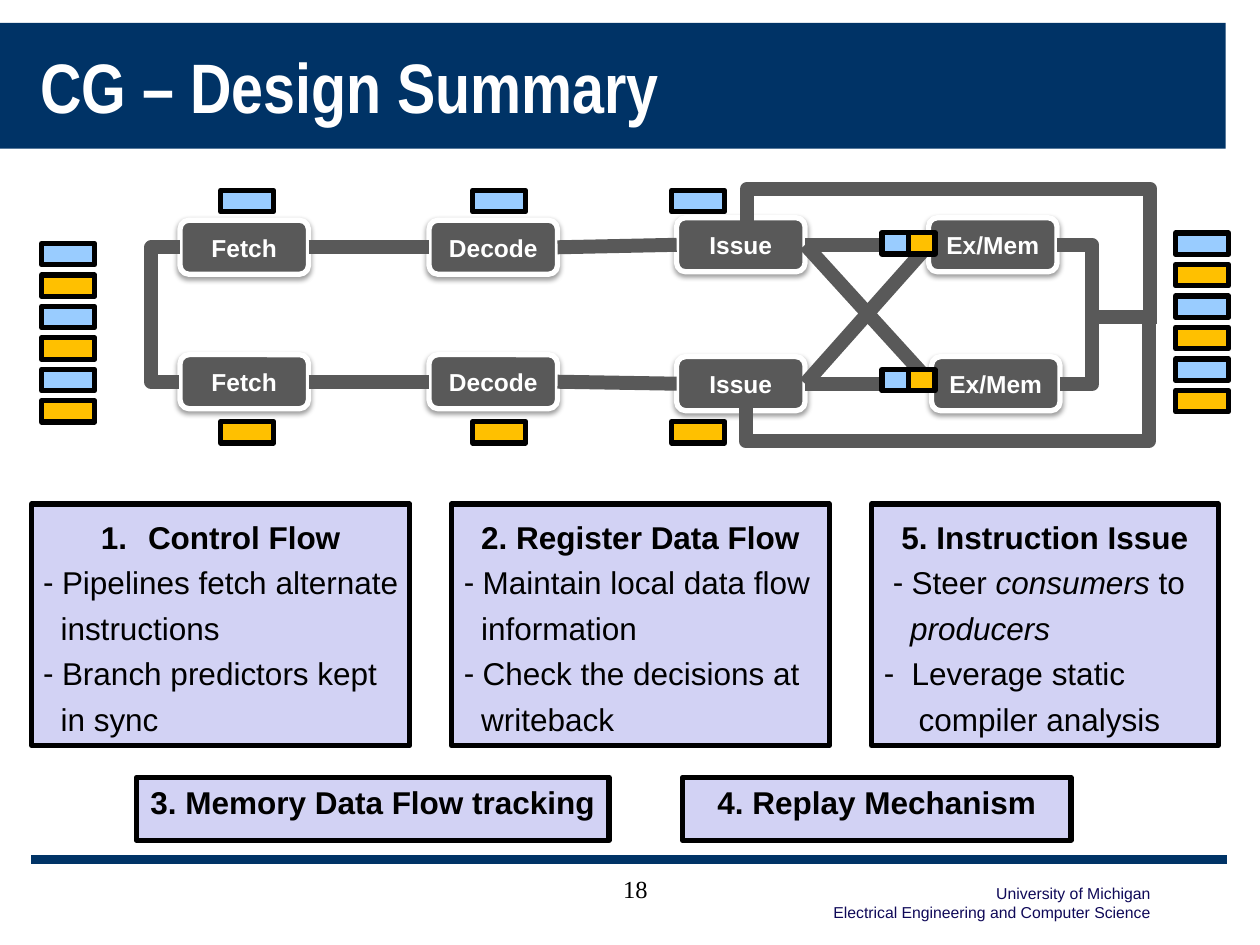
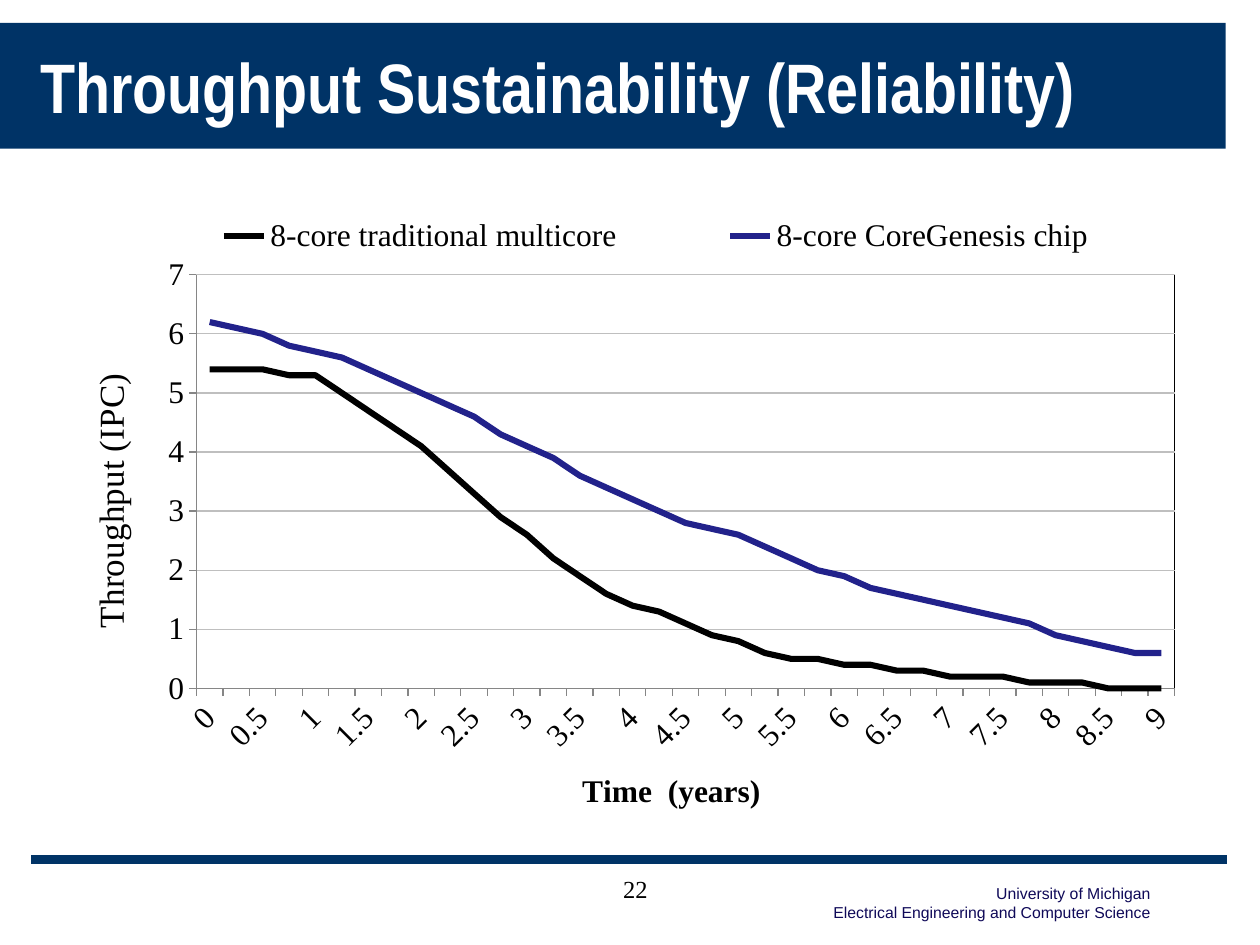
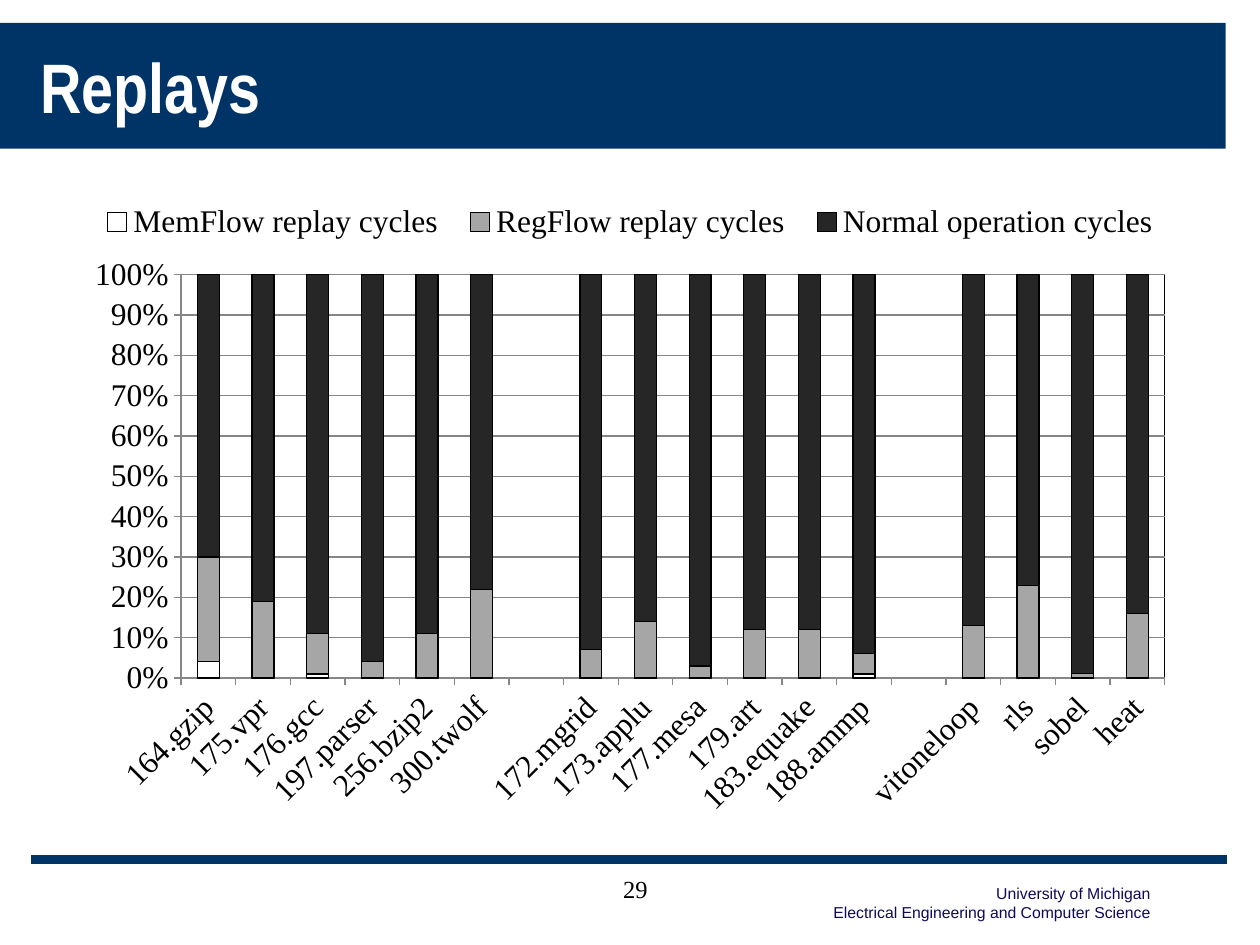
from dataclasses import dataclass
from typing import NamedTuple

from pptx import Presentation
from pptx.chart.data import CategoryChartData
from pptx.dml.color import RGBColor
from pptx.enum import chart as ch, shapes as sh, text as tx
from pptx.oxml import parse_xml
from pptx.oxml.ns import nsdecls, qn
from pptx.util import Cm, Pt


@dataclass(frozen=True)
class Theme:
    navy: str = "003366"
    footer_ink: str = "0F0958"
    white: str = "FFFFFF"
    black: str = "000000"
    stage: str = "595959"
    sky: str = "99CCFF"
    amber: str = "FFC000"
    lilac: str = "D2D2F4"
    indigo: str = "22228B"
    axis: str = "868686"
    light_grid: str = "BFBFBF"
    silver: str = "A6A6A6"
    charcoal: str = "262626"
    sans: str = "Arial"
    narrow: str = "Arial Narrow"
    serif: str = "Times New Roman"
    title_size: int = 40
    axis_title_size: int = 20
    body_size: int = 18
    label_size: int = 14
    footer_size: int = 9
    wire_width: int = 8
    outline_width: int = 3


T = Theme()


class Box(NamedTuple):
    """Left, top, width and height in centimetres."""
    x: float
    y: float
    w: float
    h: float

    def emu(self) -> list:
        return [Cm(v) for v in self]


class Line(NamedTuple):
    """A note line; words between asterisks are italic."""
    text: str
    margin: float = 0.35
    hang: float = 0
    heading: bool = False
    numbered: bool = False


class Note(NamedTuple):
    box: Box
    lines: list
    spacing: int | None = 26


class Series(NamedTuple):
    name: str
    values: list
    color: str


class ChartSpec(NamedTuple):
    kind: ch.XL_CHART_TYPE
    box: Box
    categories: list
    series: list
    plot: Box
    legend: Box
    maximum: float
    unit: float
    number_format: str
    grid: str
    label_step: int = 1
    x_title: str = ""
    y_title: str = ""
    y_title_at: tuple = ()


def rgb(color: str) -> RGBColor:
    return RGBColor.from_string(color)


def apply(target, **values) -> None:
    for name, value in values.items():
        setattr(target, name, value)


def set_font(font, size: float, color: str, name: str, **values) -> None:
    apply(font, size=Pt(size), name=name, **values)
    font.color.rgb = rgb(color)


def set_line(line, color: str, width: float) -> None:
    line.color.rgb = rgb(color)
    line.width = Pt(width)


def add_run(p, text: str, size: float, color: str, name: str, **values) -> None:
    r = p.add_run()
    r.text = text
    set_font(r.font, size, color, name, **values)


def add_box(shapes, kind, box: Box, fill: str, line: str | None = None):
    sp = shapes.add_shape(kind, *box.emu())
    sp.shadow.inherit = False
    sp.fill.solid()
    sp.fill.fore_color.rgb = rgb(fill)
    if line:
        set_line(sp.line, line, T.outline_width)
    else:
        sp.line.fill.background()
    return sp


def add_line(shapes, x1: float, y1: float, x2: float, y2: float, color: str, width: float,
             kind=sh.MSO_CONNECTOR.STRAIGHT):
    c = shapes.add_connector(kind, Cm(x1), Cm(y1), Cm(x2), Cm(y2))
    set_line(c.line, color, width)
    c.element.spPr.append(parse_xml(f"<a:effectLst {nsdecls('a')}/>"))
    return c


# ---- shared frame ----

def furnish_layout(slide, layout) -> None:
    """Give the layout its title place, band, rule and footer, drawn first on a slide."""
    title = layout.placeholders[0]
    apply(title, **dict(zip(("left", "top", "width", "height"), Box(0.56, 0.5, 21.59, 2.46).emu())))
    band = add_box(slide.shapes, sh.MSO_SHAPE.RECTANGLE, Box(-0.03, 0.46, 24.74, 2.54), T.navy)
    rule = add_line(slide.shapes, 0.63, 17.33, 24.74, 17.33, T.navy, 5)
    footer = slide.shapes.add_textbox(*Box(16.53, 17.7, 6.91, 1.02).emu())
    tf = footer.text_frame
    apply(tf, word_wrap=False, auto_size=tx.MSO_AUTO_SIZE.SHAPE_TO_FIT_TEXT)
    names = ("University of Michigan", "Electrical Engineering and Computer Science")
    for i, name in enumerate(names):
        p = tf.add_paragraph() if i else tf.paragraphs[0]
        p.alignment = tx.PP_ALIGN.RIGHT
        add_run(p, name, T.footer_size, T.footer_ink, T.sans)
    for i, sp in enumerate((band, footer, rule)):
        layout.shapes.element.insert(2 + i, sp.element)


def add_slide(prs, layout, title: str, number: int):
    s = prs.slides.add_slide(layout)
    tf = s.shapes.title.text_frame
    tf.vertical_anchor = tx.MSO_ANCHOR.MIDDLE
    p = tf.paragraphs[0]
    p.alignment = tx.PP_ALIGN.LEFT
    add_run(p, title, T.title_size, T.white, T.narrow, bold=True)
    tf = s.shapes.add_textbox(*Box(10.17, 17.5, 5.28, 1.27).emu()).text_frame
    tf.word_wrap = True
    p = tf.paragraphs[0]
    p.alignment = tx.PP_ALIGN.CENTER
    add_run(p, str(number), T.label_size, T.black, T.serif)
    return s


# ---- pipeline diagram ----

STAGE_W, STAGE_H = 2.59, 1.09
TAG_W, TAG_H, TAG_PITCH = 1.07, 0.43, 3.17 / 5
STAGES = {
    "Fetch": ((3.63, 4.44), (3.63, 7.15)),
    "Decode": ((8.65, 4.44), (8.65, 7.15)),
    "Issue": ((13.64, 4.39), (13.64, 7.19)),
    "Ex/Mem": ((18.72, 4.39), (18.78, 7.19)),
}
WIRES = [
    (("Fetch", 0), ("Decode", 0)), (("Decode", 0), ("Issue", 0)),
    (("Fetch", 1), ("Decode", 1)), (("Decode", 1), ("Issue", 1)),
    (("Issue", 0), ("Ex/Mem", 0)), (("Issue", 1), ("Ex/Mem", 1)),
    (("Issue", 1), ("Ex/Mem", 0)), (("Issue", 0), ("Ex/Mem", 1)),
]
BRACKETS = [(21.31, 4.94, 21.37, 7.74, 22.02), (3.63, 4.99, 3.62, 7.7, 3.05)]
FEEDBACK = [
    [(23.19, 6.32), (23.19, 3.81), (15.06, 3.81), (15.06, 4.47)],
    [(23.16, 6.38), (23.16, 8.89), (15.03, 8.89), (15.03, 8.23)],
]


def add_stage(shapes, name: str, x: float, y: float):
    sp = add_box(shapes, sh.MSO_SHAPE.ROUNDED_RECTANGLE, Box(x, y, STAGE_W, STAGE_H),
                 T.stage, T.white)
    sp.element.spPr.find(qn("a:effectLst")).append(parse_xml(
        f'<a:outerShdw {nsdecls("a")} blurRad="{Pt(3.1)}" dist="{Pt(1.6)}" dir="5400000" '
        f'rotWithShape="0"><a:srgbClr val="{T.black}"><a:alpha val="38000"/></a:srgbClr>'
        '</a:outerShdw>'))
    tf = sp.text_frame
    apply(tf, word_wrap=False, vertical_anchor=tx.MSO_ANCHOR.MIDDLE)
    p = tf.paragraphs[0]
    p.alignment = tx.PP_ALIGN.CENTER
    add_run(p, name, T.label_size, T.white, T.sans, bold=True)
    return sp


def add_bracket(shapes, x1: float, y1: float, x2: float, y2: float, via: float) -> None:
    """Join two points by an elbow whose upright stands at via."""
    c = add_line(shapes, x1, y1, x2, y2, T.stage, T.wire_width, sh.MSO_CONNECTOR.ELBOW)
    bend = round((via - x1) / (x2 - x1) * 100000)
    geom = c.element.spPr.find(qn("a:prstGeom"))
    for old in geom.findall(qn("a:avLst")):
        geom.remove(old)
    geom.append(parse_xml(f'<a:avLst {nsdecls("a")}><a:gd name="adj1" fmla="val {bend}"/></a:avLst>'))


def add_feedback(shapes, points: list) -> None:
    start, *rest = [(Cm(x), Cm(y)) for x, y in points]
    builder = shapes.build_freeform(*start)
    builder.add_line_segments(rest, close=False)
    sp = builder.convert_to_shape()
    sp.shadow.inherit = False
    sp.fill.background()
    set_line(sp.line, T.stage, T.wire_width)


def add_tag(shapes, x: float, y: float, color: str, w: float = TAG_W) -> None:
    add_box(shapes, sh.MSO_SHAPE.RECTANGLE, Box(x, y, w, TAG_H), color, T.black)


def draw_pipeline(shapes) -> None:
    stages = {(name, row): add_stage(shapes, name, *place)
              for name, places in STAGES.items() for row, place in enumerate(places)}
    for source, target in WIRES:
        c = add_line(shapes, 0, 0, 1, 1, T.stage, T.wire_width)
        c.begin_connect(stages[source], 3)
        c.end_connect(stages[target], 1)
    for bracket in BRACKETS:
        add_bracket(shapes, *bracket)
    add_line(shapes, 22.02, 6.39, 23.32, 6.39, T.stage, T.wire_width)
    for points in FEEDBACK:
        add_feedback(shapes, points)

    colors = (T.sky, T.amber)
    for x, top in ((0.84, 4.91), (23.7, 4.7)):
        for i in range(6):
            add_tag(shapes, x, top + i * TAG_PITCH, colors[i % 2])
    for y, color in zip((3.84, 8.5), colors):
        for x in (4.45, 9.53, 13.54):
            add_tag(shapes, x, y, color)
    for y in (4.69, 7.45):
        pair = shapes.add_group_shape().shapes
        for i, color in enumerate(colors):
            add_tag(pair, 17.78 + i * TAG_W / 2, y, color, TAG_W / 2)


# ---- notes ----

NOTES = [
    Note(Box(0.64, 10.16, 7.62, 4.87), [
        Line("Control Flow", 0.95, 0.95, heading=True, numbered=True),
        Line("Pipelines fetch alternate", 0.38, 0.38), Line("instructions"),
        Line("Branch predictors kept", 0.38, 0.38), Line("in sync")]),
    Note(Box(9.1, 10.16, 7.62, 4.87), [
        Line("2. Register Data Flow", 0, heading=True),
        Line("Maintain local data flow", 0.38, 0.38), Line("information"),
        Line("Check the decisions at", 0.38, 0.38), Line("writeback")]),
    Note(Box(2.75, 15.67, 9.53, 1.27),
         [Line("3. Memory Data Flow tracking", 0, heading=True)], None),
    Note(Box(13.76, 15.67, 7.83, 1.27),
         [Line("4. Replay Mechanism", 0, heading=True)], None),
    Note(Box(17.57, 10.16, 6.99, 4.87), [
        Line("5. Instruction Issue", 0, heading=True),
        Line("Steer *consumers* to", 0.56, 0.38), Line("*producers*", 0.53),
        Line("Leverage static", 0.56, 0.56), Line("compiler analysis", 0.7)]),
]


def add_note(shapes, note: Note) -> None:
    sp = add_box(shapes, sh.MSO_SHAPE.RECTANGLE, note.box, T.lilac, T.black)
    tf = sp.text_frame
    apply(tf, word_wrap=False, vertical_anchor=tx.MSO_ANCHOR.TOP)
    for i, line in enumerate(note.lines):
        p = tf.add_paragraph() if i else tf.paragraphs[0]
        p.alignment = tx.PP_ALIGN.CENTER if line.heading else tx.PP_ALIGN.LEFT
        if note.spacing:
            p.line_spacing = Pt(note.spacing)
        pPr = p._p.get_or_add_pPr()
        pPr.set("marL", str(Cm(line.margin)))
        pPr.set("indent", str(-Cm(line.hang)))
        if line.hang:
            bullet = 'buAutoNum {} type="arabicPeriod"' if line.numbered else 'buChar {} char="-"'
            for tag in (f'buFont {{}} typeface="{T.sans}"', bullet):
                pPr.append(parse_xml(f"<a:{tag.format(nsdecls('a'))}/>"))
        for j, part in enumerate(line.text.split("*")):
            if part:
                add_run(p, part, T.body_size, T.black, T.sans,
                        bold=line.heading, italic=j % 2 == 1)


# ---- charts ----

THROUGHPUT = ChartSpec(
    ch.XL_CHART_TYPE.LINE, Box(1.27, 3.81, 22.86, 13.13),
    [f"{i / 4:g}" for i in range(37)],
    [Series("8-core traditional multicore",
            [5.4, 5.4, 5.4, 5.3, 5.3, 5, 4.7, 4.4, 4.1, 3.7, 3.3, 2.9, 2.6, 2.2, 1.9, 1.6, 1.4,
             1.3, 1.1, 0.9, 0.8, 0.6, 0.5, 0.5, 0.4, 0.4, 0.3, 0.3, 0.2, 0.2, 0.2, 0.1, 0.1,
             0.1, 0, 0, 0], T.black),
     Series("8-core CoreGenesis chip",
            [6.2, 6.1, 6, 5.8, 5.7, 5.6, 5.4, 5.2, 5, 4.8, 4.6, 4.3, 4.1, 3.9, 3.6, 3.4, 3.2,
             3, 2.8, 2.7, 2.6, 2.4, 2.2, 2, 1.9, 1.7, 1.6, 1.5, 1.4, 1.3, 1.2, 1.1, 0.9, 0.8,
             0.7, 0.6, 0.6], T.indigo)],
    plot=Box(3.96, 5.54, 19.72, 8.34), legend=Box(2.44, 4.29, 21.57, 0.92),
    maximum=7, unit=1, number_format="General", grid=T.light_grid, label_step=2,
    x_title="Time  (years)", y_title="Throughput (IPC)", y_title_at=(1.65, 7.4))

REPLAYS = ChartSpec(
    ch.XL_CHART_TYPE.COLUMN_STACKED_100, Box(1.47, 3.81, 22.43, 12.9),
    ["164.gzip", "175.vpr", "176.gcc", "197.parser", "256.bzip2", "300.twolf", "",
     "172.mgrid", "173.applu", "177.mesa", "179.art", "183.equake", "188.ammp", "",
     "vitoneloop", "rls", "sobel", "heat"],
    [Series("MemFlow replay cycles",
            [4, 0, 1, 0, 0, 0, None, 0, 0, 0, 0, 0, 1, None, 0, 0, 0, 0], T.white),
     Series("RegFlow replay cycles",
            [26, 19, 10, 4, 11, 22, None, 7, 14, 3, 12, 12, 5, None, 13, 23, 1, 16], T.silver),
     Series("Normal operation cycles",
            [70, 81, 89, 96, 89, 78, None, 93, 86, 97, 88, 88, 94, None, 87, 77, 98, 84],
            T.charcoal)],
    plot=Box(3.65, 5.54, 19.83, 8.13), legend=Box(1.73, 4.03, 21.95, 0.9),
    maximum=1, unit=0.1, number_format="0%", grid=T.axis)


def set_layout(parent, index: int, frame: Box, place: tuple, inner: bool = False) -> None:
    """Fix a chart part at a place on the slide, inside the chart's frame."""
    for old in parent.findall(qn("c:layout")):
        parent.remove(old)
    x, y, *size = place
    shares = [(x - frame.x) / frame.w, (y - frame.y) / frame.h]
    shares += [length / whole for length, whole in zip(size, frame[2:])]
    target = '<c:layoutTarget val="inner"/>' if inner else ""
    modes = "".join(f'<c:{k}Mode val="edge"/>' for k in "xy")
    sizes = "".join(f'<c:{k} val="{v:.4f}"/>' for k, v in zip("xywh", shares))
    parent.insert(index, parse_xml(
        f'<c:layout {nsdecls("c")}><c:manualLayout>{target}{modes}{sizes}'
        '</c:manualLayout></c:layout>'))


def title_axis(axis, text: str, size: float, bold: bool) -> None:
    axis.has_title = True
    add_run(axis.axis_title.text_frame.paragraphs[0], text, size, T.black, T.serif, bold=bold)


def draw_chart(shapes, spec: ChartSpec) -> None:
    data = CategoryChartData()
    data.categories = spec.categories
    for series in spec.series:
        data.add_series(series.name, series.values)
    chart = shapes.add_chart(spec.kind, *spec.box.emu(), data).chart
    set_font(chart.font, T.body_size, T.black, T.serif)
    apply(chart, has_title=False, has_legend=True)
    apply(chart.legend, position=ch.XL_LEGEND_POSITION.TOP, include_in_layout=False)
    set_font(chart.legend.font, T.body_size, T.black, T.serif)

    cat, val = chart.category_axis, chart.value_axis
    for axis in (cat, val):
        apply(axis, major_tick_mark=ch.XL_TICK_MARK.OUTSIDE, minor_tick_mark=ch.XL_TICK_MARK.NONE)
        set_line(axis.format.line, T.axis, 0.75)
        set_font(axis.tick_labels.font, T.body_size, T.black, T.serif)
    apply(val, minimum_scale=0, maximum_scale=spec.maximum, major_unit=spec.unit,
          has_major_gridlines=True)
    apply(val.tick_labels, number_format=spec.number_format, number_format_is_linked=False)
    set_line(val.major_gridlines.format.line, spec.grid, 0.75)
    root = chart.element
    if spec.x_title:
        title_axis(cat, spec.x_title, T.body_size, True)
        title_axis(val, spec.y_title, T.axis_title_size, False)
        set_layout(root.xpath(".//c:valAx/c:title")[0], 1, spec.box, spec.y_title_at)

    plot = chart.plots[0]
    plot.vary_by_categories = False
    is_line = spec.kind == ch.XL_CHART_TYPE.LINE
    if not is_line:
        apply(plot, gap_width=150, overlap=100)
    for series, wanted in zip(plot.series, spec.series):
        if is_line:
            series.smooth = False
            series.marker.style = ch.XL_MARKER_STYLE.NONE
            set_line(series.format.line, wanted.color, 3.5)
        else:
            series.format.fill.solid()
            series.format.fill.fore_color.rgb = rgb(wanted.color)
            set_line(series.format.line, T.black, 0.75)

    area = root.xpath(".//c:plotArea")[0]
    set_layout(area, 0, spec.box, spec.plot, inner=True)
    area.append(parse_xml(
        f'<c:spPr {nsdecls("c", "a")}><a:noFill/><a:ln w="{Pt(0.75)}"><a:solidFill>'
        f'<a:srgbClr val="{T.black}"/></a:solidFill></a:ln></c:spPr>'))
    set_layout(root.xpath(".//c:legend")[0], 1, spec.box, spec.legend)
    root.xpath(".//c:catAx/c:txPr/a:bodyPr")[0].set("rot", "-2700000")
    root.xpath(".//c:catAx/c:noMultiLvlLbl")[0].addprevious(
        parse_xml(f'<c:tickLblSkip {nsdecls("c")} val="{spec.label_step}"/>'))


def main() -> None:
    prs = Presentation()
    apply(prs, slide_width=Cm(25.4), slide_height=Cm(19.05))
    layout = prs.slide_layouts[5]

    s = add_slide(prs, layout, "CG – Design Summary", 18)
    furnish_layout(s, layout)
    draw_pipeline(s.shapes)
    for note in NOTES:
        add_note(s.shapes, note)

    s = add_slide(prs, layout, "Throughput Sustainability (Reliability)", 22)
    draw_chart(s.shapes, THROUGHPUT)

    s = add_slide(prs, layout, "Replays", 29)
    draw_chart(s.shapes, REPLAYS)
    prs.save("out.pptx")


if __name__ == "__main__":
    main()
